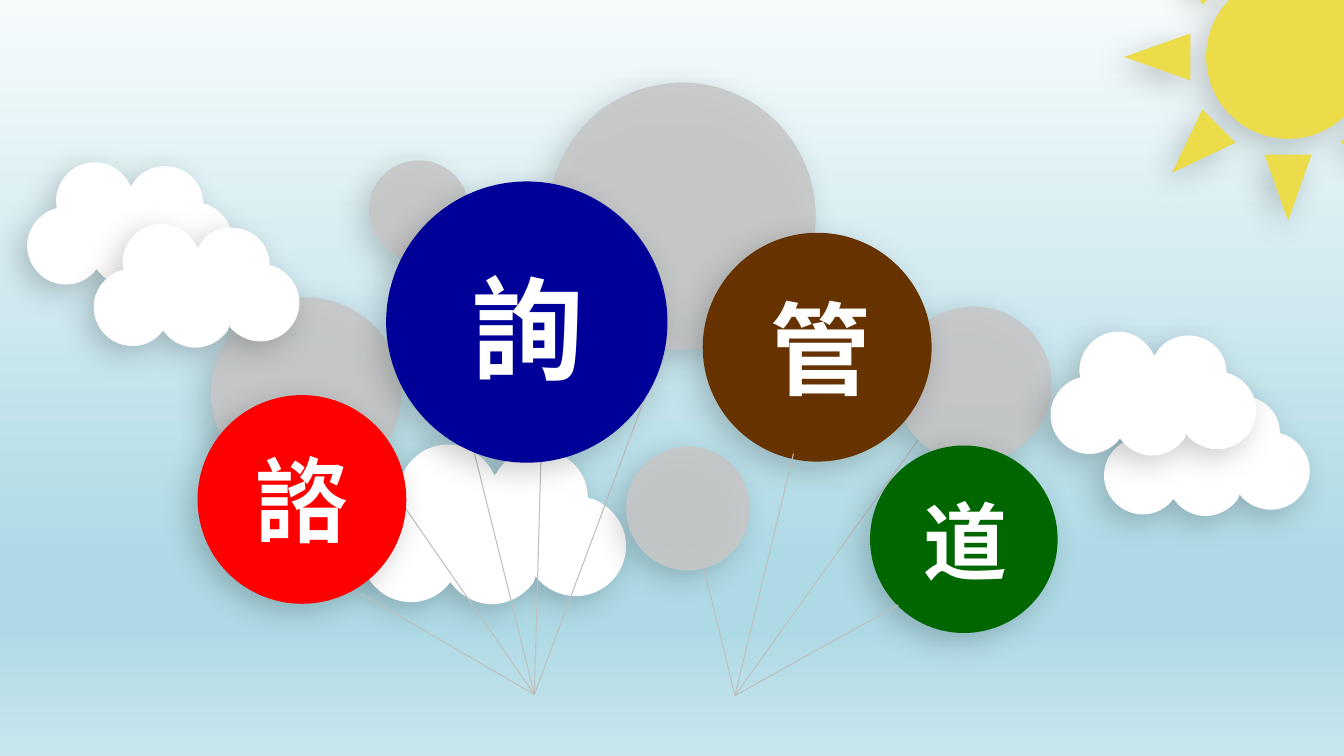
from dataclasses import dataclass

from lxml.etree import SubElement
from pptx import Presentation
from pptx.dml.color import RGBColor
from pptx.enum.shapes import MSO_CONNECTOR as Connector, MSO_SHAPE as Shape
from pptx.enum.text import MSO_AUTO_SIZE as AutoSize
from pptx.oxml.ns import qn
from pptx.util import Inches, Pt


@dataclass(frozen=True)
class Theme:
    font: str = "Noto Sans CJK SC"
    sky: tuple = ((0, "F6FBFC"), (74, "AEDAE5"), (83, "AEDAE5"), (100, "C9E6EE"))
    white: str = "FFFFFF"
    gray: str = "C7C7C7"
    string: str = "BFBFBF"
    sun: str = "ECDC49"
    red: str = "FF0000"
    blue: str = "000099"
    brown: str = "663300"
    green: str = "006600"
    shadow: str = "000000"
    shadow_opacity: int = 20
    shadow_blur: int = 22
    shadow_distance: int = 8
    shadow_angle: int = 135
    gray_opacity: int = 90
    string_width: float = 0.75


THEME = Theme()
LEFT_KNOT, RIGHT_KNOT = (5.3, 6.89), (7.29, 6.9)

# left, top, diameter, colour, string start, knot, string in front, label
# A label is its text, size, left, top, width and height.
BALLOONS = [
    (5.44, 0.82, 2.65, THEME.gray, (6.57, 3.48), LEFT_KNOT, True, None),
    (8.88, 3.04, 1.55, THEME.gray, (9.11, 4.36), RIGHT_KNOT, False, None),
    (3.66, 1.59, 0.99, THEME.gray, (4.23, 2.58), LEFT_KNOT, False, None),
    (2.09, 2.95, 1.89, THEME.gray, (3.66, 4.52), LEFT_KNOT, False, None),
    (1.96, 3.92, 2.07, THEME.red, (3.58, 5.89), LEFT_KNOT, True,
     ("諮", 66, 2.44, 4.35, 1.13, 1.21)),
    (6.21, 4.43, 1.23, THEME.gray, (6.98, 5.64), RIGHT_KNOT, True, None),
    (6.97, 2.31, 2.27, THEME.brown, (7.87, 4.5), RIGHT_KNOT, True,
     ("管", 72, 7.54, 2.79, 1.21, 1.31)),
    (8.63, 4.42, 1.86, THEME.green, (8.91, 6), RIGHT_KNOT, True,
     ("道", 60, 9.06, 4.81, 1.04, 1.11)),
    (3.83, 1.8, 2.79, THEME.blue, (5.38, 4), LEFT_KNOT, False,
     ("詢", 80, 4.58, 2.53, 1.32, 1.45)),
]

# left, top, width
BACK_CLOUD = (3.58, 4.41, 2.63)
FRONT_CLOUDS = [(0.27, 1.61, 2.04), (0.93, 2.22, 2.04),
                (10.95, 3.89, 2.04), (10.42, 3.29, 2.04)]
SUN = (11.15, -1.06, 3.25)

# One point ends a straight edge; three points are a cubic curve.
CLOUD_WIDTH = 264
CLOUD_START = (87, 0)
CLOUD_EDGES = [
    [(107, 0), (125, 13), (133, 31)], [(136, 27)],
    [(144, 13), (160, 5), (177, 5)], [(201, 5), (221, 22), (225, 44)],
    [(226, 53)], [(233, 55)],
    [(251, 63), (264, 81), (264, 101)], [(264, 129), (241, 151), (214, 151)],
    [(199, 151), (185, 144), (176, 134)], [(174, 131)], [(172, 137)],
    [(163, 150), (147, 159), (130, 159)], [(117, 159), (104, 153), (95, 144)],
    [(89, 137)], [(85, 142)],
    [(76, 151), (64, 157), (50, 157)], [(22, 157), (0, 134), (0, 107)],
    [(0, 86), (13, 69), (31, 61)], [(38, 59)], [(37, 50)],
    [(37, 23), (59, 0), (87, 0)],
]


def add_color(parent, color, opacity=100):
    node = SubElement(parent, qn("a:srgbClr"), val=color)
    if opacity < 100:
        SubElement(node, qn("a:alpha"), val=str(opacity * 1000))


def paint_sky(slide):
    fill = slide.background.fill
    fill.gradient()
    fill.gradient_angle = 270
    stops = slide.element.xpath(".//a:gsLst")[0]
    for stop in list(stops):
        stops.remove(stop)
    for percent, color in THEME.sky:
        add_color(SubElement(stops, qn("a:gs"), pos=str(percent * 1000)), color)


def paint(shape, color):
    """Fill a shape without an outline and give it the soft shadow."""
    shape.fill.solid()
    shape.fill.fore_color.rgb = RGBColor.from_string(color)
    if color == THEME.gray:
        tint = shape.element.spPr.find(qn("a:solidFill"))[0]
        SubElement(tint, qn("a:alpha"), val=str(THEME.gray_opacity * 1000))
    shape.line.fill.background()
    shape.shadow.inherit = False
    effects = shape.element.spPr.find(qn("a:effectLst"))
    shadow = SubElement(effects, qn("a:outerShdw"),
                        blurRad=str(Pt(THEME.shadow_blur)),
                        dist=str(Pt(THEME.shadow_distance)),
                        dir=str(THEME.shadow_angle * 60000),
                        algn="tr", rotWithShape="0")
    add_color(shadow, THEME.shadow, THEME.shadow_opacity)


def add_square(shapes, kind, left, top, size, color):
    shape = shapes.add_shape(kind, Inches(left), Inches(top), Inches(size), Inches(size))
    paint(shape, color)


def add_cloud(shapes, left, top, width):
    """Join the ends of the edges, then bend the curved ones."""
    unit = Inches(width) / CLOUD_WIDTH
    builder = shapes.build_freeform(*CLOUD_START, scale=unit)
    builder.add_line_segments([edge[-1] for edge in CLOUD_EDGES], close=True)
    cloud = builder.convert_to_shape(Inches(left), Inches(top))
    for segment, edge in zip(cloud.element.xpath(".//a:lnTo"), CLOUD_EDGES):
        if len(edge) == 1:
            continue
        segment.tag = qn("a:cubicBezTo")
        for point in list(segment):
            segment.remove(point)
        for x, y in edge:
            SubElement(segment, qn("a:pt"), x=str(x), y=str(y))
    paint(cloud, THEME.white)


def add_string(shapes, start, knot):
    string = shapes.add_connector(Connector.STRAIGHT, *map(Inches, start + knot))
    string.line.color.rgb = RGBColor.from_string(THEME.string)
    string.line.width = Pt(THEME.string_width)
    SubElement(string.element.spPr, qn("a:effectLst"))


def add_label(shapes, text, size, *box):
    frame = shapes.add_textbox(*map(Inches, box)).text_frame
    frame.word_wrap = False
    frame.auto_size = AutoSize.SHAPE_TO_FIT_TEXT
    run = frame.paragraphs[0].add_run()
    run.text = text
    run.font.size = Pt(size)
    run.font.bold = True
    run.font.name = THEME.font
    run.font.color.rgb = RGBColor.from_string(THEME.white)
    SubElement(run.font._element, qn("a:ea"), typeface=THEME.font)


def add_balloon(shapes, left, top, size, color, start, knot, string_in_front, label):
    if not string_in_front:
        add_string(shapes, start, knot)
    add_square(shapes, Shape.OVAL, left, top, size, color)
    if string_in_front:
        add_string(shapes, start, knot)
    if label:
        add_label(shapes, *label)


def main():
    deck = Presentation()
    deck.slide_width, deck.slide_height = Inches(13.33), Inches(7.5)
    slide = deck.slides.add_slide(deck.slide_layouts[6])
    paint_sky(slide)
    add_cloud(slide.shapes, *BACK_CLOUD)
    for balloon in BALLOONS:
        add_balloon(slide.shapes, *balloon)
    for cloud in FRONT_CLOUDS:
        add_cloud(slide.shapes, *cloud)
    add_square(slide.shapes, Shape.SUN, *SUN, THEME.sun)
    deck.save("out.pptx")


if __name__ == "__main__":
    main()
